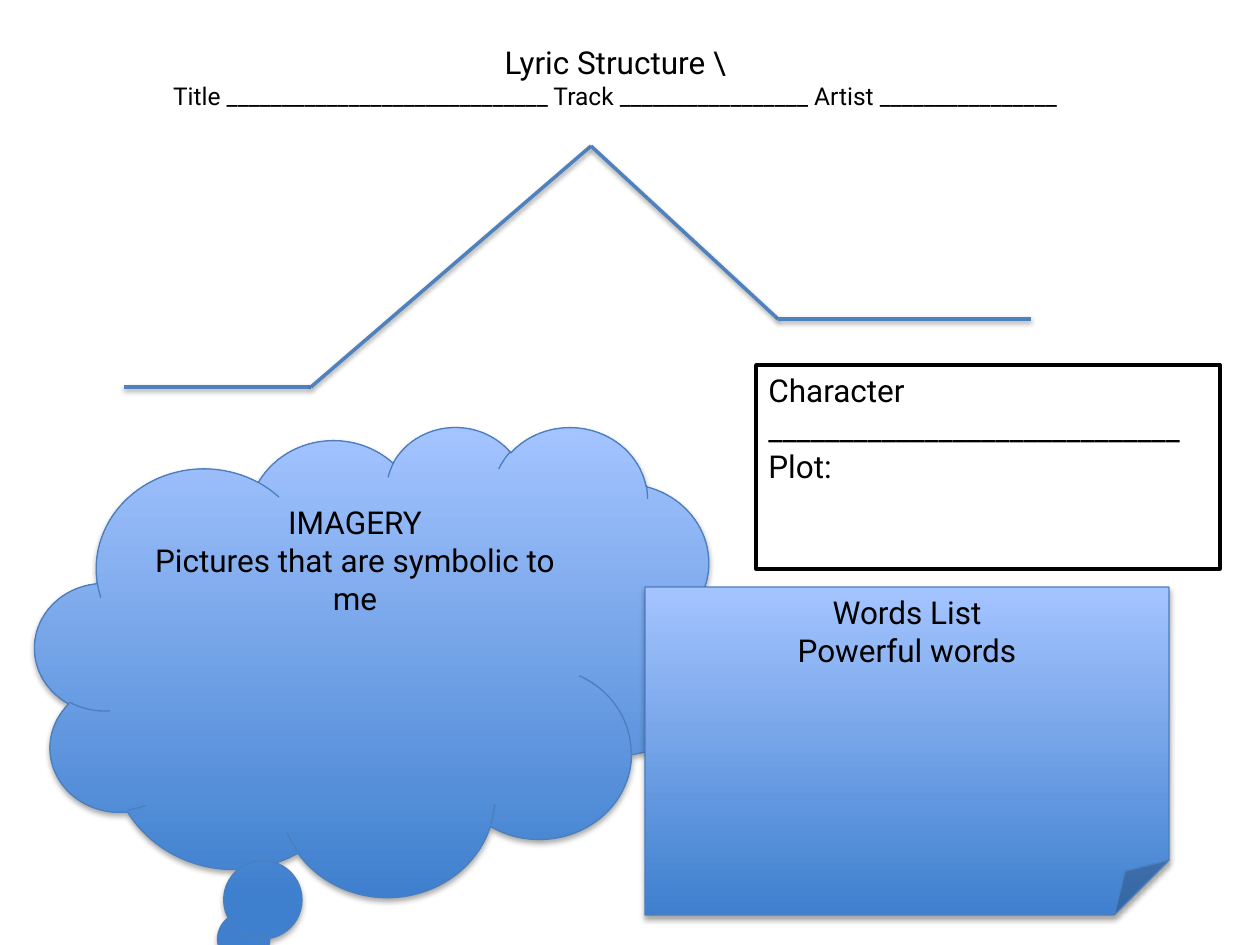
from dataclasses import dataclass
from itertools import pairwise

from lxml import etree
from pptx import Presentation, util as u
from pptx.dml.color import RGBColor
from pptx.enum import shapes, text
from pptx.oxml.ns import qn

EMU_PER_PX = 914400 / 126
FONT = "Roboto"
BLACK, WHITE = "000000", "FFFFFF"
PLOT_LINE, PANEL_LINE = "4F81BD", "4B7EBC"
GRADIENT = ("3F80CE", "A4C4FF")
PLOT_POINTS = [(124, 387), (311, 387), (591, 146), (778, 319), (1031, 319)]


@dataclass(frozen=True)
class Panel:
    kind: shapes.MSO_SHAPE
    box: tuple[int, int, int, int]
    lines: tuple[str, ...]
    line_color: str
    line_width: float
    align: text.PP_ALIGN
    gradient: bool


PANELS = [
    Panel(shapes.MSO_SHAPE.RECTANGLE, (756, 365, 464, 204),
          ("Character _____________________________", "Plot:"),
          BLACK, 2, text.PP_ALIGN.LEFT, False),
    Panel(shapes.MSO_SHAPE.CLOUD_CALLOUT, (35, 426, 689, 470),
          ("IMAGERY", "Pictures that are symbolic to me"),
          PANEL_LINE, 0.75, text.PP_ALIGN.CENTER, True),
    Panel(shapes.MSO_SHAPE.FOLDED_CORNER, (645, 587, 524, 328),
          ("Words List", "Powerful words"),
          PANEL_LINE, 0.75, text.PP_ALIGN.CENTER, True),
]


def px(value: int) -> u.Emu:
    return u.Emu(round(value * EMU_PER_PX))


def color(value: str) -> RGBColor:
    return RGBColor.from_string(value)


def style_font(font, size: int) -> None:
    font.name = FONT
    font.size = u.Pt(size)
    font.color.rgb = color(BLACK)


def add_drop_shadow(shape, opacity: int, distance: float) -> None:
    """Append a soft downward shadow; call after fill and line are set."""
    effects = etree.SubElement(shape._element.spPr, qn("a:effectLst"))
    shadow = etree.SubElement(
        effects, qn("a:outerShdw"), blurRad=str(u.Pt(3.1)),
        dist=str(u.Pt(distance)), dir=str(90 * 60000), rotWithShape="0")
    shade = etree.SubElement(shadow, qn("a:srgbClr"), val=BLACK)
    etree.SubElement(shade, qn("a:alpha"), val=str(opacity * 1000))


def add_heading(slide) -> None:
    heading = slide.shapes.add_textbox(px(63), px(38), px(1105), px(77))
    frame = heading.text_frame
    frame.word_wrap = True
    frame.vertical_anchor = text.MSO_ANCHOR.MIDDLE
    paragraph = frame.paragraphs[0]
    paragraph.alignment = text.PP_ALIGN.CENTER
    title = paragraph.add_run()
    title.text = "Lyric Structure \\"
    style_font(title.font, 18)
    paragraph.add_line_break()
    blanks = paragraph.add_run()
    blanks.text = ("Title _____________________________ "
                   "Track _________________ Artist ________________")
    style_font(blanks.font, 14)


def add_plot_line(slide) -> None:
    for start, end in pairwise(PLOT_POINTS):
        segment = slide.shapes.add_connector(
            shapes.MSO_CONNECTOR.STRAIGHT, *map(px, start + end))
        segment.line.color.rgb = color(PLOT_LINE)
        segment.line.width = u.Pt(2)
        add_drop_shadow(segment, 38, 1.6)


def add_panel(slide, panel: Panel) -> None:
    shape = slide.shapes.add_shape(panel.kind, *map(px, panel.box))
    if panel.gradient:
        shape.fill.gradient()
        shape.fill.gradient_angle = 90
        for stop, stop_color in zip(shape.fill.gradient_stops, GRADIENT):
            stop.color.rgb = color(stop_color)
    else:
        shape.fill.solid()
        shape.fill.fore_color.rgb = color(WHITE)
    shape.line.color.rgb = color(panel.line_color)
    shape.line.width = u.Pt(panel.line_width)
    if panel.gradient:
        add_drop_shadow(shape, 35, 1.8)
    else:
        shape.shadow.inherit = False

    frame = shape.text_frame
    frame.word_wrap = True
    frame.vertical_anchor = text.MSO_ANCHOR.TOP
    frame.text = "\n".join(panel.lines)
    for paragraph in frame.paragraphs:
        paragraph.alignment = panel.align
        style_font(paragraph.font, 18)


def main() -> None:
    presentation = Presentation()
    presentation.slide_width, presentation.slide_height = px(1260), px(945)
    slide = presentation.slides.add_slide(presentation.slide_layouts[6])
    add_heading(slide)
    add_plot_line(slide)
    for panel in PANELS:
        add_panel(slide, panel)
    presentation.save("out.pptx")


if __name__ == "__main__":
    main()
